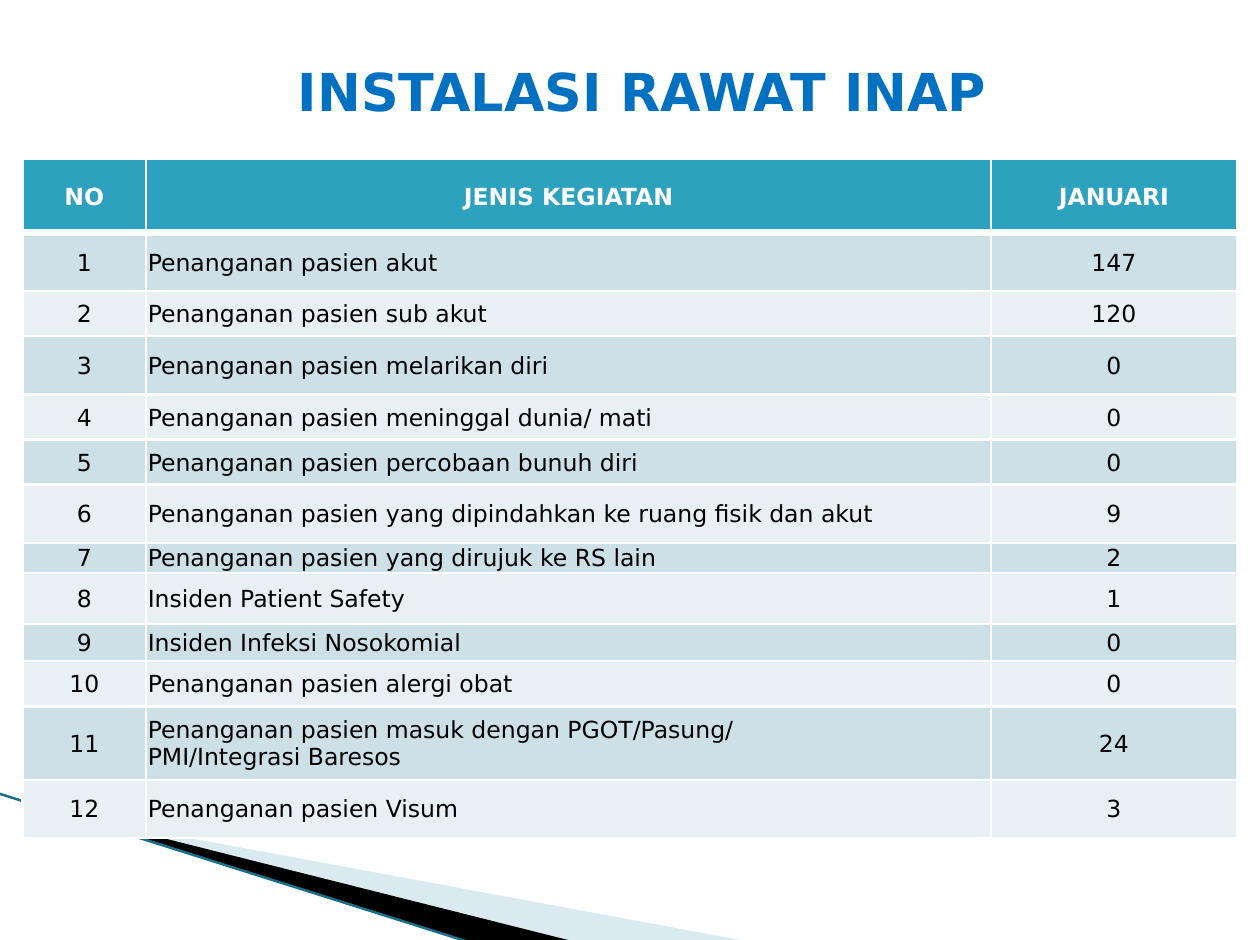
from lxml import etree
from pptx import Presentation
from pptx.dml.color import RGBColor
from pptx.enum.shapes import MSO_CONNECTOR
from pptx.enum.text import MSO_ANCHOR, PP_ALIGN
from pptx.oxml.ns import qn
from pptx.util import Emu, Inches, Pt

LEFT, CENTER = PP_ALIGN.LEFT, PP_ALIGN.CENTER
MIDDLE = MSO_ANCHOR.MIDDLE
STRAIGHT = MSO_CONNECTOR.STRAIGHT
FONT = "DejaVu Sans"
COLORS = {
    "title": "0070C0", "head": "2DA2BF", "odd": "CDE0E8", "even": "E8F0F4",
    "white": "FFFFFF", "black": "000000", "wedge": "A0CBDC", "edge": "1A6F8A",
}

# The slide is a grid of 670 columns by 500 rows
WIDE, HIGH = 670, 500
UNIT = Inches(0.01)
FOOT = HIGH + 1  # the wedges bleed just past the bottom edge

COLS = [65.6, 449.2, 131]
ROWS = [39.2, 31, 24, 31, 24, 24, 31, 16, 27, 20, 24, 39, 31]
HEADS = ["NO", "JENIS KEGIATAN", "JANUARI"]
DATA = [
    ("Penanganan pasien akut", 147),
    ("Penanganan pasien sub akut", 120),
    ("Penanganan pasien melarikan diri", 0),
    ("Penanganan pasien meninggal dunia/ mati", 0),
    ("Penanganan pasien percobaan bunuh diri", 0),
    ("Penanganan pasien yang dipindahkan ke ruang fisik dan akut", 9),
    ("Penanganan pasien yang dirujuk ke RS lain", 2),
    ("Insiden Patient Safety", 1),
    ("Insiden Infeksi Nosokomial", 0),
    ("Penanganan pasien alergi obat", 0),
    ("Penanganan pasien masuk dengan PGOT/Pasung/\nPMI/Integrasi Baresos", 24),
    ("Penanganan pasien Visum", 3),
]


def grid(*cells):
    return [Emu(round(n * UNIT)) for n in cells]


def color(name):
    return RGBColor.from_string(COLORS[name])


def write(frame, text, size=9, tint="black", bold=False, align=CENTER):
    par = frame.paragraphs[0]
    par.text = text
    par.alignment = align
    par.font.name = FONT
    par.font.size = Pt(size)
    par.font.bold = bold
    par.font.color.rgb = color(tint)


def inset(box, left, top, right, low):
    (box.margin_left, box.margin_top,
     box.margin_right, box.margin_bottom) = grid(left, top, right, low)
    box.vertical_anchor = MIDDLE


def reframe(shape, place):
    """Give the shape a new frame while its outline stays in place."""
    left, top, wide, high = place
    route = shape.element.spPr.find(".//" + qn("a:path"))
    shift = {"x": round(shape.left / UNIT) - left,
             "y": round(shape.top / UNIT) - top}
    for point in route.iter(qn("a:pt")):
        for axis, move in shift.items():
            point.set(axis, str(int(point.get(axis)) + move))
    route.set("w", str(wide))
    route.set("h", str(high))
    shape.left, shape.top, shape.width, shape.height = grid(*place)


def wedge(slide, points, place, tint, alpha=None):
    first, *rest = points
    form = slide.shapes.build_freeform(*first, scale=UNIT)
    form.add_line_segments(rest, close=True)
    shape = form.convert_to_shape()
    reframe(shape, place)
    shape.shadow.inherit = False
    shape.line.fill.background()
    shape.fill.solid()
    shape.fill.fore_color.rgb = color(tint)
    if alpha:
        rgb = shape.element.spPr.find(".//" + qn("a:srgbClr"))
        etree.SubElement(rgb, qn("a:alpha"), val=str(alpha * 1000))


def rule(slide, start, end, tint, width):
    line = slide.shapes.add_connector(STRAIGHT, *grid(*start), *grid(*end))
    line.line.color.rgb = color(tint)
    line.line.width = Pt(width)
    etree.SubElement(line.element.spPr, qn("a:effectLst"))


def title(slide, text, place):
    box = slide.shapes.add_textbox(*grid(*place))
    frame = box.text_frame
    frame.word_wrap = True
    inset(frame, 6, 3, 6, 3)
    write(frame, text, size=20, tint="title", bold=True)


def border(cell, top=1, low=1):
    props = cell._tc.get_or_add_tcPr()
    for side, width in zip("LRTB", (1, 1, top, low)):
        line = etree.SubElement(props, qn("a:ln" + side), w=str(Pt(width)))
        fill = etree.SubElement(line, qn("a:solidFill"))
        etree.SubElement(fill, qn("a:srgbClr"), val=COLORS["white"])


def table(slide, left, top):
    rows = [HEADS] + [(n, *row) for n, row in enumerate(DATA, 1)]
    place = grid(left, top, sum(COLS), sum(ROWS))
    tab = slide.shapes.add_table(len(ROWS), len(COLS), *place).table
    for col, width in zip(tab.columns, grid(*COLS)):
        col.width = width
    for row, height in zip(tab.rows, grid(*ROWS)):
        row.height = height
    for r, row in enumerate(rows):
        head = r == 0
        tint = "head" if head else "odd" if r % 2 else "even"
        for c, text in enumerate(row):
            cell = tab.cell(r, c)
            inset(cell, 1, 1, 1, 0)
            # A thick rule parts the head from the body
            border(cell, top=3 if r == 1 else 1, low=3 if head else 1)
            cell.fill.solid()
            cell.fill.fore_color.rgb = color(tint)
            write(cell.text_frame, str(text), bold=head,
                  tint="white" if head else "black",
                  align=LEFT if c == 1 and not head else CENTER)


def main():
    deck = Presentation()
    deck.slide_width, deck.slide_height = grid(WIDE, HIGH)
    slide = deck.slides.add_slide(deck.slide_layouts[6])

    # Corner wedges behind the table
    wedge(slide, [(37, 434), (399, FOOT), (305, FOOT)],
          (52, 365, 279, 105), "wedge", alpha=40)
    wedge(slide, [(36, 433), (306, FOOT), (249, FOOT)],
          (-4, 422, 278, 61), "black")
    rule(slide, (-1, 422), (249, FOOT), "edge", 0.95)

    # Heading and table
    title(slide, "INSTALASI RAWAT INAP", (44, 21.7, 595, 53))
    table(slide, 12, 84.7)

    deck.save("out.pptx")


if __name__ == "__main__":
    main()
